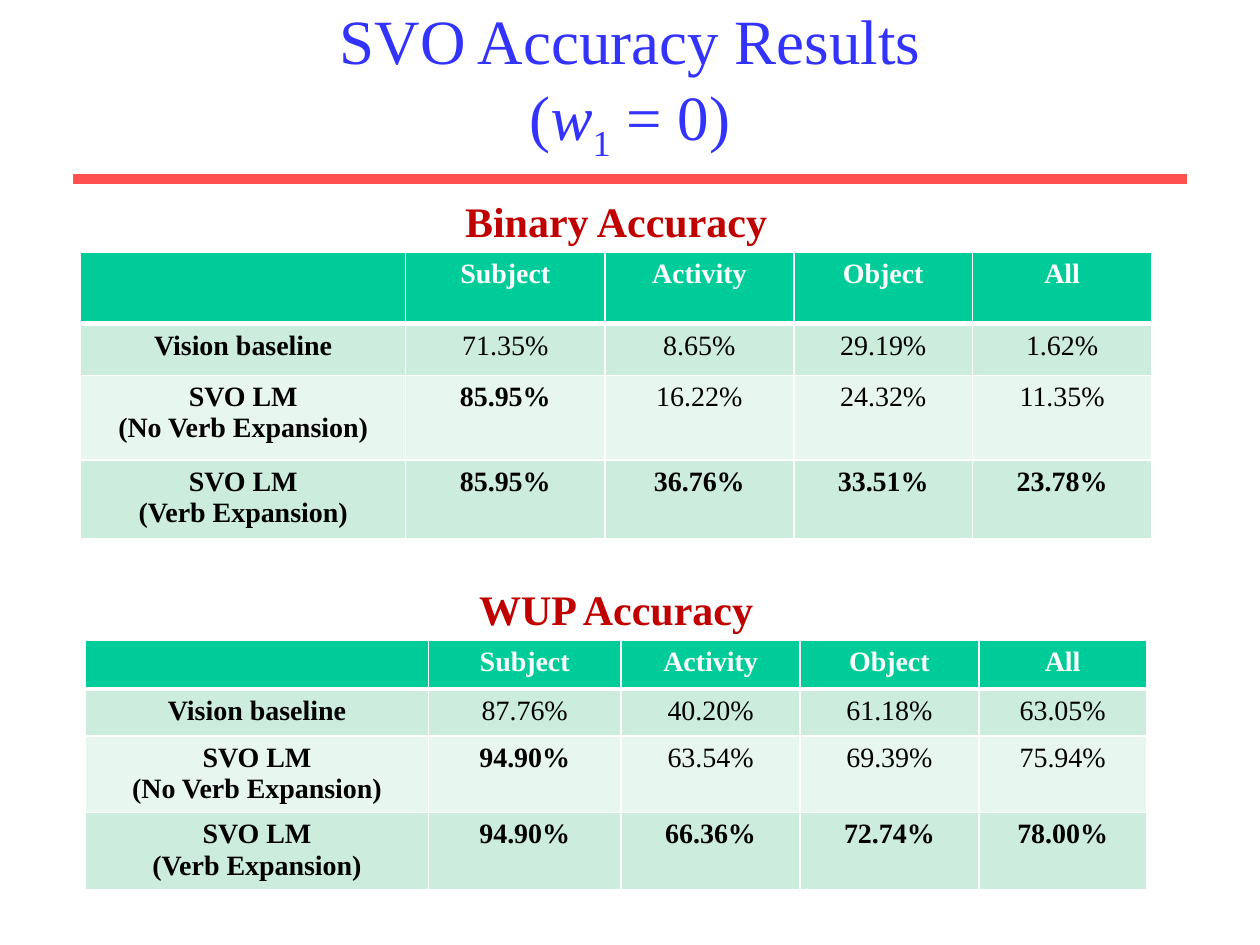
import pptx
import pptx.dml.color
import pptx.enum.shapes
import pptx.enum.text
import pptx.oxml.ns
import pptx.util
from lxml import etree

Inches = pptx.util.Inches
Pt = pptx.util.Pt
CENTER = pptx.enum.text.PP_ALIGN.CENTER

FONT = "Times New Roman"
COLORS = {
    "title": "3333FF",
    "rule": "FF5050",
    "caption": "C00000",
    "head": "00CC99",
    "odd": "CCECDE",
    "even": "E7F6EF",
    "white": "FFFFFF",
    "black": "000000",
}

HEADS = ["", "Subject", "Activity", "Object", "All"]
LABELS = ["Vision baseline", "SVO LM\n(No Verb Expansion)", "SVO LM\n(Verb Expansion)"]
BINARY = [
    [71.35, 8.65, 29.19, 1.62],
    [85.95, 16.22, 24.32, 11.35],
    [85.95, 36.76, 33.51, 23.78],
]
WUP = [
    [87.76, 40.20, 61.18, 63.05],
    [94.90, 63.54, 69.39, 75.94],
    [94.90, 66.36, 72.74, 78.00],
]


def rgb(name):
    return pptx.dml.color.RGBColor.from_string(COLORS[name])


def style(para, size, color, bold=False):
    para.alignment = CENTER
    font = para.font
    font.name, font.size, font.bold = FONT, Pt(size), bold
    font.color.rgb = rgb(color)


def add_rule(slide, left, right, top):
    line = slide.shapes.add_connector(
        pptx.enum.shapes.MSO_CONNECTOR.STRAIGHT,
        Inches(left), Inches(top), Inches(right), Inches(top))
    line.line.color.rgb = rgb("rule")
    line.line.width = Pt(6)
    props = line.element.find(pptx.oxml.ns.qn("p:spPr"))
    etree.SubElement(props, pptx.oxml.ns.qn("a:effectLst"))


def add_title(slide):
    title = slide.shapes.title
    title.left, title.top = Inches(0.5), Inches(0.17)
    title.width, title.height = Inches(9), Inches(0.97)
    frame = title.text_frame
    frame.auto_size = pptx.enum.text.MSO_AUTO_SIZE.NONE
    frame.vertical_anchor = pptx.enum.text.MSO_ANCHOR.MIDDLE
    para = frame.paragraphs[0]
    style(para, 36, "title")
    para.add_run().text = "SVO Accuracy Results"
    para.add_line_break()
    para.add_run().text = "("
    var = para.add_run()
    var.text = "w"
    var.font.italic = True
    sub = para.add_run()
    sub.text = "1"
    sub.font._element.set("baseline", "-25000")
    para.add_run().text = " = 0)"


def add_caption(slide, text, left, top, width):
    box = slide.shapes.add_textbox(
        Inches(left), Inches(top), Inches(width), Inches(0.5))
    box.text_frame.word_wrap = False
    para = box.text_frame.paragraphs[0]
    para.text = text
    style(para, 24, "caption", True)


def add_edge(cell, side, width):
    props = cell._tc.get_or_add_tcPr()
    edge = etree.SubElement(props, pptx.oxml.ns.qn("a:ln" + side), w=str(Pt(width)))
    fill = etree.SubElement(edge, pptx.oxml.ns.qn("a:solidFill"))
    etree.SubElement(fill, pptx.oxml.ns.qn("a:srgbClr"), val=COLORS["white"])


def fill_cell(cell, text, row, bold):
    cell.text = text
    for para in cell.text_frame.paragraphs:
        style(para, 16, "black" if row else "white", bold)
    # The edge between header and body is thicker; edges precede the fill
    thick = {(0, "B"), (1, "T")}
    for side in "LRTB":
        add_edge(cell, side, 3 if (row, side) in thick else 1)
    band = "odd" if row % 2 else "even"
    cell.fill.solid()
    cell.fill.fore_color.rgb = rgb(band if row else "head")


def add_scores(slide, scores, left, top, widths, heights):
    table = slide.shapes.add_table(
        len(heights), len(widths), Inches(left), Inches(top),
        Inches(sum(widths)), Inches(sum(heights))).table
    for col, width in zip(table.columns, widths):
        col.width = Inches(width)
    for row, height in zip(table.rows, heights):
        row.height = Inches(height)
    # Headers, labels and the best score of each column are bold
    best = [max(col) for col in zip(*scores)]
    for c, head in enumerate(HEADS):
        fill_cell(table.cell(0, c), head, 0, True)
    for r, (label, vals) in enumerate(zip(LABELS, scores), 1):
        fill_cell(table.cell(r, 0), label, r, True)
        for c, val in enumerate(vals, 1):
            fill_cell(table.cell(r, c), f"{val:.2f}%", r, val == best[c - 1])


def main():
    deck = pptx.Presentation()
    deck.slide_width, deck.slide_height = Inches(10), Inches(7.5)
    slide = deck.slides.add_slide(deck.slide_layouts[5])

    # Heading
    add_rule(slide, 0.58, 9.42, 1.42)
    add_title(slide)

    # Score tables
    add_scores(slide, BINARY, 0.64, 2,
               [2.58, 1.58, 1.5, 1.42, 1.42], [0.57, 0.41, 0.67, 0.63])
    add_scores(slide, WUP, 0.68, 5.08,
               [2.72, 1.53, 1.42, 1.42, 1.33], [0.39, 0.37, 0.61, 0.61])

    # Captions
    add_caption(slide, "Binary Accuracy", 3.58, 1.5, 2.62)
    add_caption(slide, "WUP Accuracy", 3.69, 4.58, 2.4)

    deck.save("out.pptx")


if __name__ == "__main__":
    main()
